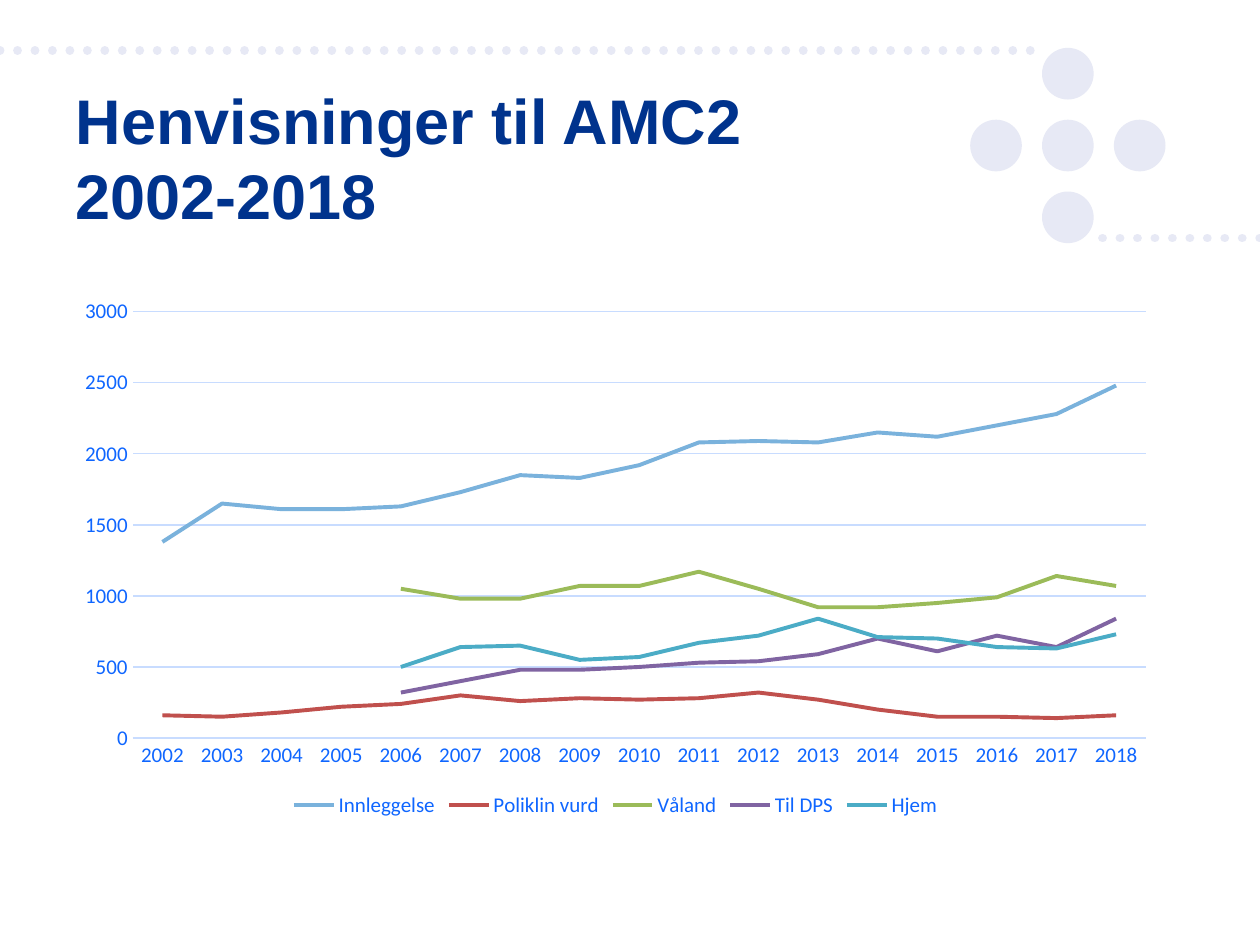
from pptx import Presentation
from pptx.chart.data import CategoryChartData
from pptx.dml.color import RGBColor
from pptx.enum.chart import XL_CHART_TYPE, XL_LEGEND_POSITION, XL_TICK_MARK
from pptx.enum.dml import MSO_LINE
from pptx.enum.shapes import MSO_CONNECTOR, MSO_SHAPE
from pptx.enum.text import MSO_ANCHOR, PP_ALIGN
from pptx.oxml.ns import qn
from pptx.util import Inches, Pt
from lxml.etree import SubElement

PALE = RGBColor(0xE7, 0xE9, 0xF5)
NAVY = RGBColor(0x00, 0x33, 0x8D)
BLUE = RGBColor(0x0F, 0x66, 0xFF)
GRID = RGBColor(0xC8, 0xDC, 0xFF)
SKY = RGBColor(0x7A, 0xB2, 0xDC)
RED = RGBColor(0xC0, 0x50, 0x4D)
GREEN = RGBColor(0x9B, 0xBB, 0x59)
PURPLE = RGBColor(0x80, 0x64, 0xA2)
TEAL = RGBColor(0x4B, 0xAC, 0xC6)

YEARS = range(2002, 2019)
SERIES = [
    ("Innleggelse", SKY, [1380, 1650, 1610, 1610, 1630, 1730, 1850, 1830, 1920,
                          2080, 2090, 2080, 2150, 2120, 2200, 2280, 2480]),
    ("Poliklin vurd", RED, [160, 150, 180, 220, 240, 300, 260, 280, 270,
                            280, 320, 270, 200, 150, 150, 140, 160]),
    ("Våland", GREEN, [1050, 980, 980, 1070, 1070, 1170, 1050,
                       920, 920, 950, 990, 1140, 1070]),
    ("Til DPS", PURPLE, [320, 400, 480, 480, 500, 530, 540,
                         590, 700, 610, 720, 640, 840]),
    ("Hjem", TEAL, [500, 640, 650, 550, 570, 670, 720,
                    840, 710, 700, 640, 630, 730]),
]


def add_dots(slide, left, top, width):
    line = slide.shapes.add_connector(
        MSO_CONNECTOR.STRAIGHT, Inches(left), Inches(top),
        Inches(left + width), Inches(top))
    line.line.color.rgb = PALE
    line.line.width = Pt(5)
    line.line.dash_style = MSO_LINE.ROUND_DOT
    props = line._element.spPr
    props.find(qn("a:ln")).set("cap", "rnd")
    SubElement(props, qn("a:effectLst"))


def add_cross(slide, left, top, size, step):
    for col, row in [(1, 0), (1, 2), (1, 1), (0, 1), (2, 1)]:
        disc = slide.shapes.add_shape(
            MSO_SHAPE.OVAL, Inches(left + col * step), Inches(top + row * step),
            Inches(size), Inches(size))
        disc.shadow.inherit = False
        disc.fill.solid()
        disc.fill.fore_color.rgb = PALE
        disc.line.fill.background()


def set_title(slide, left, top, width, height):
    title = slide.shapes.title
    title.left, title.top = Inches(left), Inches(top)
    title.width, title.height = Inches(width), Inches(height)
    frame = title.text_frame
    frame.text = "Henvisninger til AMC2 2002-2018"
    frame.word_wrap = True
    frame.vertical_anchor = MSO_ANCHOR.MIDDLE
    para = frame.paragraphs[0]
    para.alignment = PP_ALIGN.LEFT
    set_font(para.font, "Arial", 36, NAVY)
    para.font.bold = True


def set_font(font, name, size, color):
    font.name = name
    font.size = Pt(size)
    font.color.rgb = color


def set_line(line, color, width):
    line.color.rgb = color
    line.width = Pt(width)


def add_graph(slide, left, top, width, height):
    data = CategoryChartData()
    data.categories = [str(year) for year in YEARS]
    for name, _, vals in SERIES:
        data.add_series(name, [None] * (len(YEARS) - len(vals)) + vals)
    chart = slide.shapes.add_chart(
        XL_CHART_TYPE.LINE, Inches(left), Inches(top),
        Inches(width), Inches(height), data).chart
    chart.has_title = False
    set_font(chart.font, "Calibri", 10, NAVY)

    chart.has_legend = True
    chart.legend.position = XL_LEGEND_POSITION.BOTTOM
    chart.legend.include_in_layout = False
    set_font(chart.legend.font, "Calibri", 12, BLUE)

    for axis in (chart.category_axis, chart.value_axis):
        axis.major_tick_mark = axis.minor_tick_mark = XL_TICK_MARK.NONE
        set_font(axis.tick_labels.font, "Calibri", 12, BLUE)
    set_line(chart.category_axis.format.line, GRID, 0.75)
    value = chart.value_axis
    value.minimum_scale, value.maximum_scale, value.major_unit = 0, 3000, 500
    value.format.line.fill.background()
    set_line(value.major_gridlines.format.line, GRID, 0.75)

    chart.plots[0].vary_by_categories = False
    for series, (_, color, _) in zip(chart.plots[0].series, SERIES):
        series.smooth = False
        set_line(series.format.line, color, 2.25)


def main():
    deck = Presentation()
    deck.slide_width, deck.slide_height = Inches(10), Inches(7.5)
    slide = deck.slides.add_slide(deck.slide_layouts[5])
    add_dots(slide, 0, 0.4, 8.31)
    add_dots(slide, 8.75, 1.89, 1.25)
    add_cross(slide, 7.7, 0.38, 0.41, 0.57)
    set_title(slide, 0.5, 0.59, 5.8, 1.31)
    add_graph(slide, 0.5, 2.29, 8.77, 4.24)
    deck.save("out.pptx")


if __name__ == "__main__":
    main()
